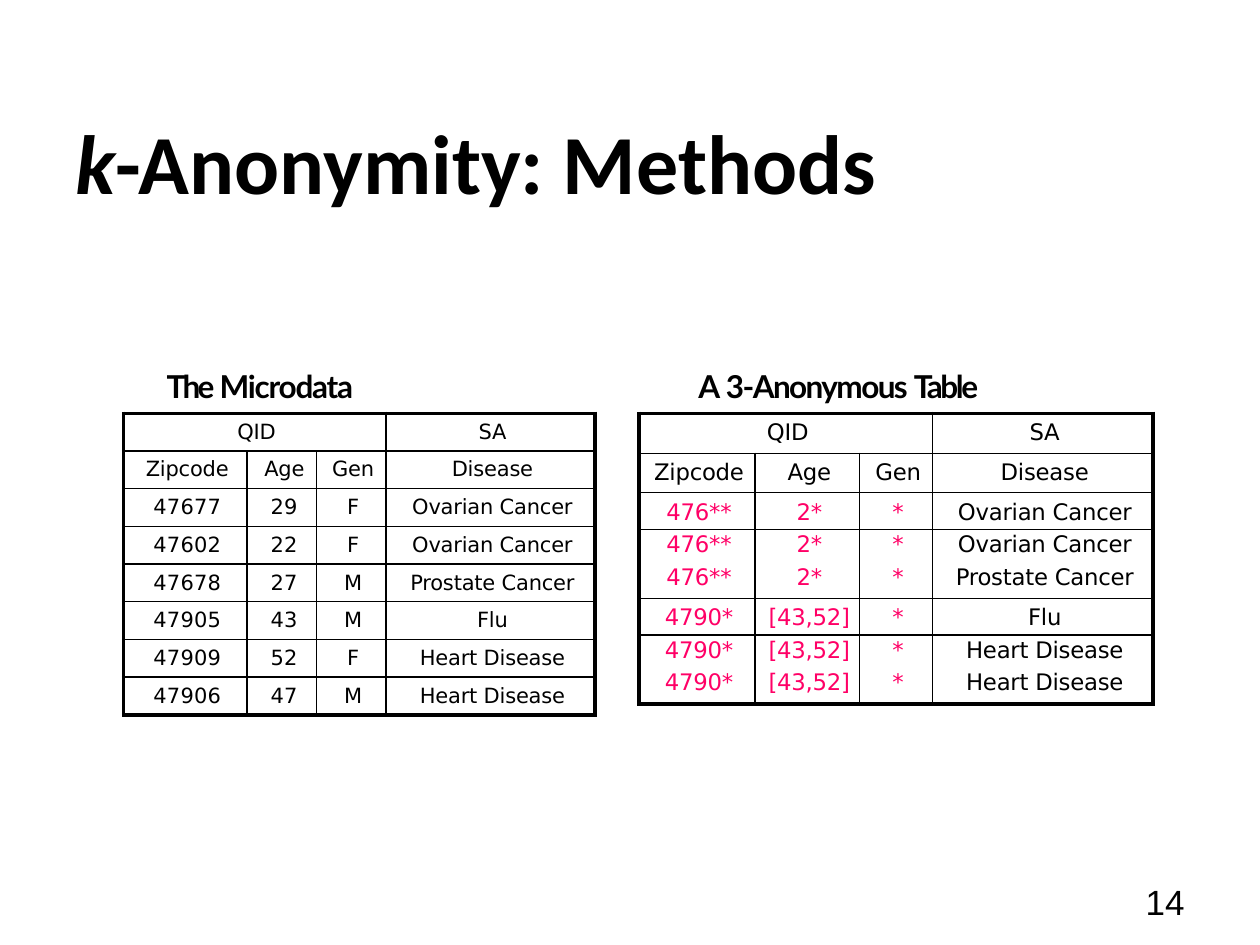
from itertools import accumulate
from lxml.etree import SubElement
from pptx import Presentation
from pptx.dml.color import RGBColor as RGB
from pptx.enum.text import MSO_ANCHOR as Anchor, MSO_AUTO_SIZE as AutoSize, PP_ALIGN as Align
from pptx.oxml.ns import qn
from pptx.util import Cm, Pt

COLORS = {"ink": "000000", "generalized": "FF0066"}
OUTER, INNER = 2.25, 1
HEADERS = [("QID", "", "", "SA"), ("Zipcode", "Age", "Gen", "Disease")]
MICRODATA = HEADERS + [
    ("47677", "29", "F", "Ovarian Cancer"),
    ("47602", "22", "F", "Ovarian Cancer"),
    ("47678", "27", "M", "Prostate Cancer"),
    ("47905", "43", "M", "Flu"),
    ("47909", "52", "F", "Heart Disease"),
    ("47906", "47", "M", "Heart Disease"),
]
ANONYMOUS = HEADERS + [
    (*qid, "*", disease)
    for qid, diseases in (
        (("476**", "2*"), ("Ovarian Cancer", "Ovarian Cancer", "Prostate Cancer")),
        (("4790*", "[43,52]"), ("Flu", "Heart Disease", "Heart Disease")),
    )
    for disease in diseases
]


def style_font(font, name, size, color="ink", bold=None):
    """Set the typeface, size, colour and weight of a font."""
    font.name, font.size, font.bold = name, Pt(size), bold
    font.color.rgb = RGB.from_string(COLORS[color])


def add_tracked_run(paragraph, text, spacing):
    """Add a run with letter spacing given in points."""
    run = paragraph.add_run()
    run.text = text
    run.font._element.set("spc", str(round(spacing * 100)))


def set_borders(cell, widths):
    """Draw the left, right, top and bottom borders; width 0 leaves one out."""
    properties = cell._tc.get_or_add_tcPr()
    for position, (side, width) in enumerate(zip("LRTB", widths)):
        line = SubElement(properties, qn(f"a:ln{side}"), w=str(Pt(width)))
        properties.insert(position, line)
        if width:
            fill = SubElement(line, qn("a:solidFill"))
            SubElement(fill, qn("a:srgbClr"), val=COLORS["ink"])
        else:
            SubElement(line, qn("a:noFill"))


def fill_cell(cell, text, size, tight, generalized, right_inset):
    """Write one table cell, centred or set against a right inset."""
    cell.fill.background()
    cell.margin_left = cell.margin_bottom = 0
    cell.margin_right = Cm(right_inset)
    cell.margin_top = Cm(0.05 if tight else 0.13)
    paragraph = cell.text_frame.paragraphs[0]
    paragraph.alignment = Align.RIGHT if right_inset else Align.CENTER
    paragraph.space_before = Pt(1.5 if tight else 3.5)
    style_font(paragraph.font, "DejaVu Sans", size, "generalized" if generalized else "ink")
    if not right_inset:
        paragraph._p.get_or_add_pPr().set("marL", str(Cm(0.08)))
    if text:
        add_tracked_run(paragraph, text, 0.1 if text.isdigit() else -0.1)


def add_records(slide, left, top, widths, heights, records, size, joined=(), age_insets=(0, 0)):
    """Add a QID/SA table; each row in joined runs into the next without a rule."""
    *_, width = accumulate(widths)
    *_, height = accumulate(heights)
    table = slide.shapes.add_table(
        len(records), len(widths), Cm(left), Cm(top), Cm(width), Cm(height)).table
    table.first_row = table.horz_banding = False
    for column, column_width in zip(table.columns, widths):
        column.width = Cm(column_width)
    for row, row_height in zip(table.rows, heights):
        row.height = Cm(row_height)
    last_row, last_column = len(records) - 1, len(widths) - 1
    for r, record in enumerate(records):
        for c, text in enumerate(record):
            cell = table.cell(r, c)
            tight = r in joined or r - 1 in joined
            age_inset = age_insets[r > 1] if c == 1 and r else 0
            fill_cell(cell, text, size, tight, "*" in text or text.startswith("["), age_inset)
            set_borders(cell, (
                INNER if c else OUTER,
                INNER if c < last_column else OUTER,
                OUTER if r == 0 else 0 if r - 1 in joined else INNER,
                OUTER if r == last_row else 0 if r in joined else INNER,
            ))
    table.cell(0, 0).merge(table.cell(0, 2))


def add_caption(slide, left, top, width, height, parts):
    """Add a table caption made of parts with their own letter spacing."""
    frame = slide.shapes.add_textbox(Cm(left), Cm(top), Cm(width), Cm(height)).text_frame
    frame.word_wrap = True
    frame.auto_size = AutoSize.SHAPE_TO_FIT_TEXT
    frame.margin_left = frame.margin_right = frame.margin_bottom = 0
    frame.margin_top = Cm(0.03)
    paragraph = frame.paragraphs[0]
    paragraph.space_before = Pt(1)
    paragraph._p.get_or_add_pPr().set("marL", str(Cm(0.03)))
    style_font(paragraph.font, "Lato", 18, bold=True)
    for text, spacing in parts:
        add_tracked_run(paragraph, text, spacing)


def place_title(slide, left, top, width, height):
    """Move and format the title placeholder."""
    title = slide.shapes.title
    title.left, title.top, title.width, title.height = map(Cm, (left, top, width, height))
    title.text_frame.vertical_anchor = Anchor.MIDDLE
    paragraph = title.text_frame.paragraphs[0]
    paragraph.alignment = Align.LEFT
    style_font(paragraph.font, "Calibri", 48, bold=True)
    for text, italic in (("k", True), ("-Anonymity: Methods", False)):
        run = paragraph.add_run()
        run.text, run.font.italic = text, italic


def add_page_number(slide, left, top, width, height):
    """Add the page number, set to the right."""
    frame = slide.shapes.add_textbox(Cm(left), Cm(top), Cm(width), Cm(height)).text_frame
    frame.word_wrap = True
    frame.vertical_anchor = Anchor.MIDDLE
    paragraph = frame.paragraphs[0]
    paragraph.text, paragraph.alignment = "14", Align.RIGHT
    style_font(paragraph.font, "Arial", 20)


def main():
    """Build the slide and save it."""
    presentation = Presentation()
    presentation.slide_width, presentation.slide_height = Cm(25.4), Cm(19.05)
    slide = presentation.slides.add_slide(presentation.slide_layouts[5])
    place_title(slide, 1.27, 1.65, 22.86, 3.18)
    add_page_number(slide, 18.2, 17.66, 5.93, 1.01)
    add_records(slide, 2.49, 8.33, (2.49, 1.4, 1.4, 4.22), [0.76] * 8, MICRODATA, 12,
                age_insets=(0.24, 0.38))
    add_records(slide, 12.88, 8.33, (2.34, 2.11, 1.47, 4.44),
                (0.81, 0.79) + (0.74, 0.65, 0.74) * 2, ANONYMOUS, 13, joined=(3, 6))
    add_caption(slide, 3.33, 7.37, 3.91, 0.84, (("The ", -1.5), ("Microdata", -0.7)))
    add_caption(slide, 14.05, 7.37, 5.79, 0.84,
                (("A ", -0.5), ("3-Anonymous ", -0.9), ("Table", -1.4)))
    presentation.save("out.pptx")


if __name__ == "__main__":
    main()
